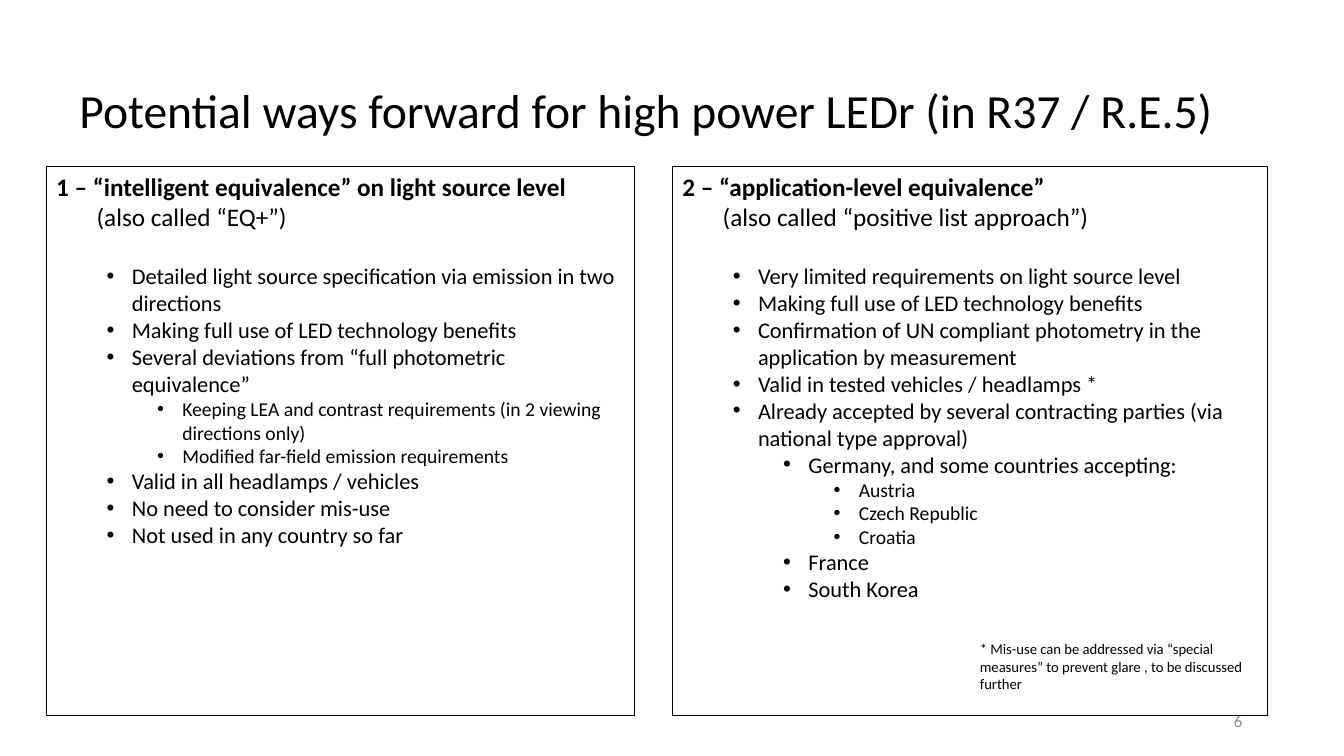
from pptx import Presentation
from pptx.dml.color import RGBColor
from pptx.enum.shapes import MSO_SHAPE as Shape
from pptx.enum.text import MSO_ANCHOR as Anchor, PP_ALIGN as Align
from pptx.oxml.xmlchemy import OxmlElement as Node
from pptx.util import Inches, Pt

BLACK = RGBColor(0x00, 0x00, 0x00)
GRAY = RGBColor(0x8C, 0x8C, 0x8C)
FONT = "Calibri"

LEFT = [
    (1, 16, "Detailed light source specification via emission in two directions"),
    (1, 16, "Making full use of LED technology benefits"),
    (1, 16, "Several deviations from “full photometric equivalence”"),
    (2, 14, "Keeping LEA and contrast requirements (in 2 viewing directions only)"),
    (2, 14, "Modified far-field emission requirements"),
    (1, 16, "Valid in all headlamps / vehicles"),
    (1, 16, "No need to consider mis-use"),
    (1, 16, "Not used in any country so far"),
]
RIGHT = [
    (1, 16, "Very limited requirements on light source level"),
    (1, 16, "Making full use of LED technology benefits"),
    (1, 16, "Confirmation of UN compliant photometry in the application by measurement"),
    (1, 16, "Valid in tested vehicles / headlamps *"),
    (1, 16, "Already accepted by several contracting parties (via national type approval)"),
    (2, 16, "Germany, and some countries accepting:"),
    (3, 14, "Austria"),
    (3, 14, "Czech Republic"),
    (3, 14, "Croatia"),
    (2, 16, "France"),
    (2, 16, "South Korea"),
]


def put(para, text, size=18, color=BLACK, bold=False, align=Align.LEFT,
        margin=0, level=0, before=0, spacing=None):
    """Fill a paragraph with formatted text, bulleted when level is above zero."""
    run = para.add_run()
    run.text = text
    run.font.name = FONT
    run.font.size = Pt(size)
    run.font.bold = bold
    run.font.color.rgb = color
    para.alignment = align
    para.space_before = Pt(before)
    if spacing:
        para.line_spacing = spacing
    props = para._p.get_or_add_pPr()
    if level:
        para.level = level
        margin = 0.25 + 0.5 * level
        props.set("indent", str(Inches(-0.25)))
        face = Node("a:buFont")
        face.set("typeface", "Arial")
        mark = Node("a:buChar")
        mark.set("char", "•")
        props.extend([face, mark])
    props.set("marL", str(Inches(margin)))


def add_text(slide, x, y, w, h, text, anchor=Anchor.TOP, **style):
    """Add a wrapping text box with one paragraph."""
    box = slide.shapes.add_textbox(Inches(x), Inches(y), Inches(w), Inches(h))
    frame = box.text_frame
    frame.word_wrap = True
    frame.vertical_anchor = anchor
    put(frame.paragraphs[0], text, **style)


def add_panel(slide, x, w, head, alias, items):
    """Add an outlined panel with a heading, its alias and a bullet list."""
    panel = slide.shapes.add_shape(
        Shape.RECTANGLE, Inches(x), Inches(1.65), Inches(w), Inches(5.45))
    panel.shadow.inherit = False
    panel.fill.background()
    panel.line.color.rgb = BLACK
    panel.line.width = Pt(0.75)
    frame = panel.text_frame
    frame.word_wrap = True
    frame.vertical_anchor = Anchor.TOP
    put(frame.paragraphs[0], head, bold=True)
    put(frame.add_paragraph(), alias, margin=0.4)
    for i, (level, size, text) in enumerate(items):
        put(frame.add_paragraph(), text, size=size, level=level,
            before=0 if i else 22)


def main():
    """Build the slide and save it."""
    deck = Presentation()
    deck.slide_width = Inches(13.33)
    deck.slide_height = Inches(7.5)
    slide = deck.slides.add_slide(deck.slide_layouts[6])
    add_text(slide, 0.69, 0.4, 11.5, 1.45,
             "Potential ways forward for high power LEDr (in R37 / R.E.5)",
             anchor=Anchor.MIDDLE, size=34, spacing=0.9)
    add_panel(slide, 6.67, 5.9, "2 – “application-level equivalence”",
              "(also called “positive list approach”)", RIGHT)
    add_panel(slide, 0.46, 5.83, "1 – “intelligent equivalence” on light source level",
              "(also called “EQ+”)", LEFT)
    add_text(slide, 9.62, 6.3, 2.87, 0.93,
             "* Mis-use can be addressed via “special measures” to prevent glare ,"
             " to be discussed further", size=10.5)
    add_text(slide, 9.42, 6.95, 3, 0.4, "6", anchor=Anchor.MIDDLE,
             size=12, color=GRAY, align=Align.RIGHT)
    deck.save("out.pptx")


if __name__ == "__main__":
    main()
